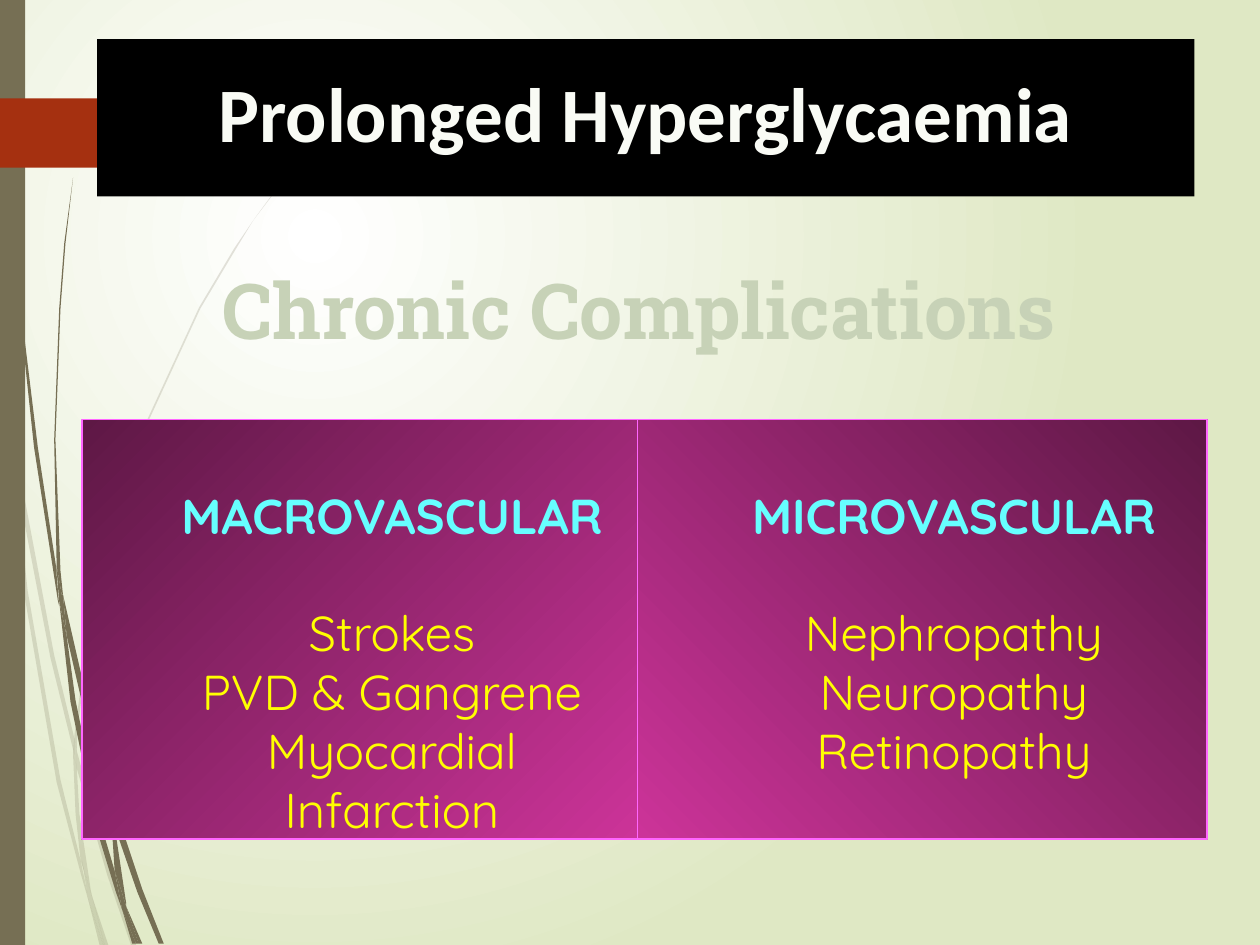
import pptx
import pptx.dml.color
import pptx.enum.shapes
import pptx.enum.text
import pptx.oxml
import pptx.oxml.ns
import pptx.util
from pptx.util import Inches

RECT = pptx.enum.shapes.MSO_SHAPE.RECTANGLE
ALIGN = pptx.enum.text.PP_ALIGN
ANCHOR = pptx.enum.text.MSO_ANCHOR

OLIVE, RUST, BLACK, IVORY, SAGE = "766F54", "A53010", "000000", "F9FBF5", "C7D2B7"
MAGENTA, PLUM, PINK, CYAN, YELLOW = "CC3399", "5E1845", "FF66FF", "66FFFF", "FFFF00"

TITLE = "Prolonged Hyperglycaemia"
SUBTITLE = "Chronic Complications"
# left, width, gradient start, gradient end, counter-clockwise angle, heading, items
COMPLICATIONS = [
    (0.65, 4.42, PLUM, MAGENTA, 315, "MACROVASCULAR",
     ["Strokes", "PVD & Gangrene", "Myocardial Infarction"]),
    (5.06, 4.52, MAGENTA, PLUM, 45, "MICROVASCULAR",
     ["Nephropathy", "Neuropathy", "Retinopathy"]),
]
PANEL_TOP, PANEL_HEIGHT = 3.33, 3.33

# Outlines of the grass blades, as x, y corner points in inches
PALE_BLADES = [
    [(0.08, 3.5), (0.06, 3.22), (0, 2.82), (0, 2.99), (0.07, 3.44)],
    [(0.4, 5.22), (0.59, 5.99), (0.59, 5.86), (0.43, 5.2), (0.1, 3.45), (0.12, 3.76)],
    [(0.64, 6.07), (0.61, 5.96), (0.61, 6.1), (0.85, 6.94), (1.04, 7.5), (1.08, 7.5),
     (0.88, 6.92)],
    [(0.83, 7.5), (0.86, 7.5), (0.73, 7.11)],
    [(0.64, 6.83), (0.48, 6.19), (0.22, 4.69), (0.12, 3.76), (0.08, 3.5), (0.19, 4.7),
     (0.45, 6.21), (0.64, 6.93), (0.7, 7.14), (0.69, 7.07)],
    [(0.58, 5.99), (0.6, 6.46), (0.64, 6.83), (0.67, 6.92), (0.73, 7.11), (0.72, 7.06),
     (0.63, 6.46), (0.61, 6.1), (0.61, 6.08)],
    [(0.61, 5.84), (0.76, 4.62), (1.11, 3.49), (1.59, 2.45), (1.87, 1.98), (2.01, 1.75),
     (2.17, 1.54), (2.17, 1.53), (2.01, 1.75), (1.86, 1.97), (1.58, 2.44), (1.1, 3.48),
     (0.75, 4.61), (0.59, 5.84), (0.59, 5.86), (0.61, 5.96)],
    [(0.7, 7.14), (0.79, 7.5), (0.82, 7.5)],
    [(0.61, 6.08), (0.61, 6.1), (0.61, 5.96), (0.59, 5.86), (0.58, 5.99)],
    [(0.67, 6.92), (0.65, 6.83), (0.69, 7.07), (0.7, 7.14), (0.82, 7.5), (0.83, 7.5),
     (0.73, 7.11)],
]
DARK_BLADES = [
    [(0.05, 1.1), (0.14, 2.33), (0.27, 3.55), (0.46, 4.77), (0.47, 4.81), (0.45, 4.57),
     (0.45, 4.53), (0.3, 3.55), (0.15, 2.32), (0.06, 1.09), (0.04, 0.48), (0.03, 0),
     (0.02, 0), (0.03, 0.48)],
    [(0.73, 5.92), (0.88, 6.45), (0.88, 6.33), (0.88, 6.31), (0.77, 5.9), (0.5, 4.72),
     (0.53, 5.05)],
    [(0.94, 6.49), (0.91, 6.41), (0.91, 6.56), (1.09, 7.08), (1.26, 7.49), (1.3, 7.49),
     (1.13, 7.06)],
    [(0.91, 6.91), (0.81, 6.57), (0.6, 5.56), (0.53, 5.05), (0.47, 4.77), (0.56, 5.57),
     (0.77, 6.59), (0.92, 7.08), (0.97, 7.22), (0.96, 7.17)],
    [(0.5, 4.72), (0.48, 4.53), (0.44, 3.49), (0.48, 2.45), (0.52, 1.93), (0.58, 1.41),
     (0.51, 1.93), (0.47, 2.45), (0.43, 3.49), (0.45, 4.49), (0.49, 4.72)],
    [(1.1, 7.49), (1.13, 7.49), (1, 7.19)],
    [(0.47, 4.77), (0.53, 5.05), (0.5, 4.72), (0.49, 4.72), (0.45, 4.49), (0.45, 4.53)],
    [(0.91, 6.33), (1.03, 5.52), (1.31, 4.76), (1.69, 4.06), (1.91, 3.74), (2.03, 3.59),
     (2.16, 3.44), (2.15, 3.44), (2.03, 3.58), (1.91, 3.73), (1.68, 4.05), (1.29, 4.74),
     (1.01, 5.51), (0.88, 6.31), (0.91, 6.41)],
    [(0.97, 7.22), (1.05, 7.49), (1.08, 7.49)],
    [(0.88, 6.45), (0.91, 6.91), (0.96, 7.06), (1, 7.19), (1, 7.16), (0.91, 6.56),
     (0.9, 6.51)],
    [(0.88, 6.45), (0.9, 6.51), (0.91, 6.56), (0.91, 6.41), (0.88, 6.31), (0.88, 6.33)],
    [(0.96, 7.06), (0.91, 6.91), (0.96, 7.17), (0.97, 7.22), (1.08, 7.49), (1.1, 7.49),
     (1, 7.19)],
]
ARROW = [(0, 0.78), (1.21, 0.78), (1.24, 0.79), (1.49, 1.04), (1.49, 1.07),
         (1.24, 1.32), (1.21, 1.33), (0, 1.33)]


def rgb(value):
    return pptx.dml.color.RGBColor.from_string(value)


def paint(shape, color):
    shape.shadow.inherit = False
    shape.fill.solid()
    shape.fill.fore_color.rgb = rgb(color)
    shape.line.fill.background()


def set_gradient(fill, start, end):
    fill.gradient()
    for stop, position, color in zip(fill.gradient_stops, (0, 1), (start, end)):
        stop.position = position
        stop.color.rgb = rgb(color)


def add_outline(slide, points, color, opacity=100):
    corners = [(Inches(x), Inches(y)) for x, y in points]
    builder = slide.shapes.build_freeform(*corners[0])
    builder.add_line_segments(corners[1:], close=True)
    outline = builder.convert_to_shape()
    paint(outline, color)
    if opacity < 100:
        tint = outline.fill._xPr.find(".//" + pptx.oxml.ns.qn("a:srgbClr"))
        tint.append(pptx.oxml.parse_xml(
            f'<a:alpha {pptx.oxml.ns.nsdecls("a")} val="{opacity * 1000}"/>'))


def style(paragraph, font, size, color, bold):
    paragraph.alignment = ALIGN.CENTER
    for run in paragraph.runs:
        run.font.name = font
        run.font.size = pptx.util.Pt(size)
        run.font.bold = bold
        run.font.color.rgb = rgb(color)


def set_headline(shape, words, font, color):
    frame = shape.text_frame
    frame.word_wrap = True
    frame.text = words
    frame.paragraphs[0].line_spacing = 0.9
    style(frame.paragraphs[0], font, 44, color, True)


def add_panel(slide, left, width, start, end, angle, heading, items):
    panel = slide.shapes.add_shape(
        RECT, Inches(left), Inches(PANEL_TOP), Inches(width), Inches(PANEL_HEIGHT))
    panel.shadow.inherit = False
    set_gradient(panel.fill, start, end)
    panel.fill.gradient_angle = angle
    panel.line.color.rgb = rgb(PINK)
    panel.line.width = pptx.util.Pt(0.75)
    frame = panel.text_frame
    frame.word_wrap = True
    frame.vertical_anchor = ANCHOR.TOP
    frame.margin_top = Inches(0.52)
    frame.text = "\n".join([heading] + items)
    for index, paragraph in enumerate(frame.paragraphs):
        is_heading = index == 0
        paragraph.level = 1
        properties = paragraph._p.get_or_add_pPr()
        properties.set("marL", str(Inches(0.5)))
        properties.set("indent", "0")
        style(paragraph, "Quicksand", 28, CYAN if is_heading else YELLOW, is_heading)
    frame.paragraphs[0].space_after = pptx.util.Pt(33.5)


def set_background(slide):
    """Fill with a radial gradient centred in the upper left quarter."""
    fill = slide.background.fill
    set_gradient(fill, "FFFFFF", "DFE8C4")
    linear = fill._xPr.find(".//" + pptx.oxml.ns.qn("a:lin"))
    linear.getparent().replace(linear, pptx.oxml.parse_xml(
        f'<a:path {pptx.oxml.ns.nsdecls("a")} path="circle">'
        '<a:fillToRect l="50000" t="50000" r="100000" b="100000"/></a:path>'))


def main():
    deck = pptx.Presentation()
    deck.slide_width, deck.slide_height = Inches(10), Inches(7.5)
    slide = deck.slides.add_slide(deck.slide_layouts[6])
    set_background(slide)
    for blade in PALE_BLADES:
        add_outline(slide, blade, OLIVE, 20)
    for blade in DARK_BLADES:
        add_outline(slide, blade, OLIVE)
    side_bar = slide.shapes.add_shape(RECT, 0, 0, Inches(0.2), deck.slide_height)
    paint(side_bar, OLIVE)
    add_outline(slide, ARROW, RUST)

    title = slide.shapes.add_shape(
        RECT, Inches(0.77), Inches(0.31), Inches(8.71), Inches(1.25))
    paint(title, BLACK)
    set_headline(title, TITLE, "Calibri", IVORY)
    subtitle = slide.shapes.add_textbox(
        Inches(1.13), Inches(2.12), Inches(7.89), Inches(0.92))
    set_headline(subtitle, SUBTITLE, "Roboto Slab", SAGE)
    for panel in COMPLICATIONS:
        add_panel(slide, *panel)
    deck.save("out.pptx")


if __name__ == "__main__":
    main()
